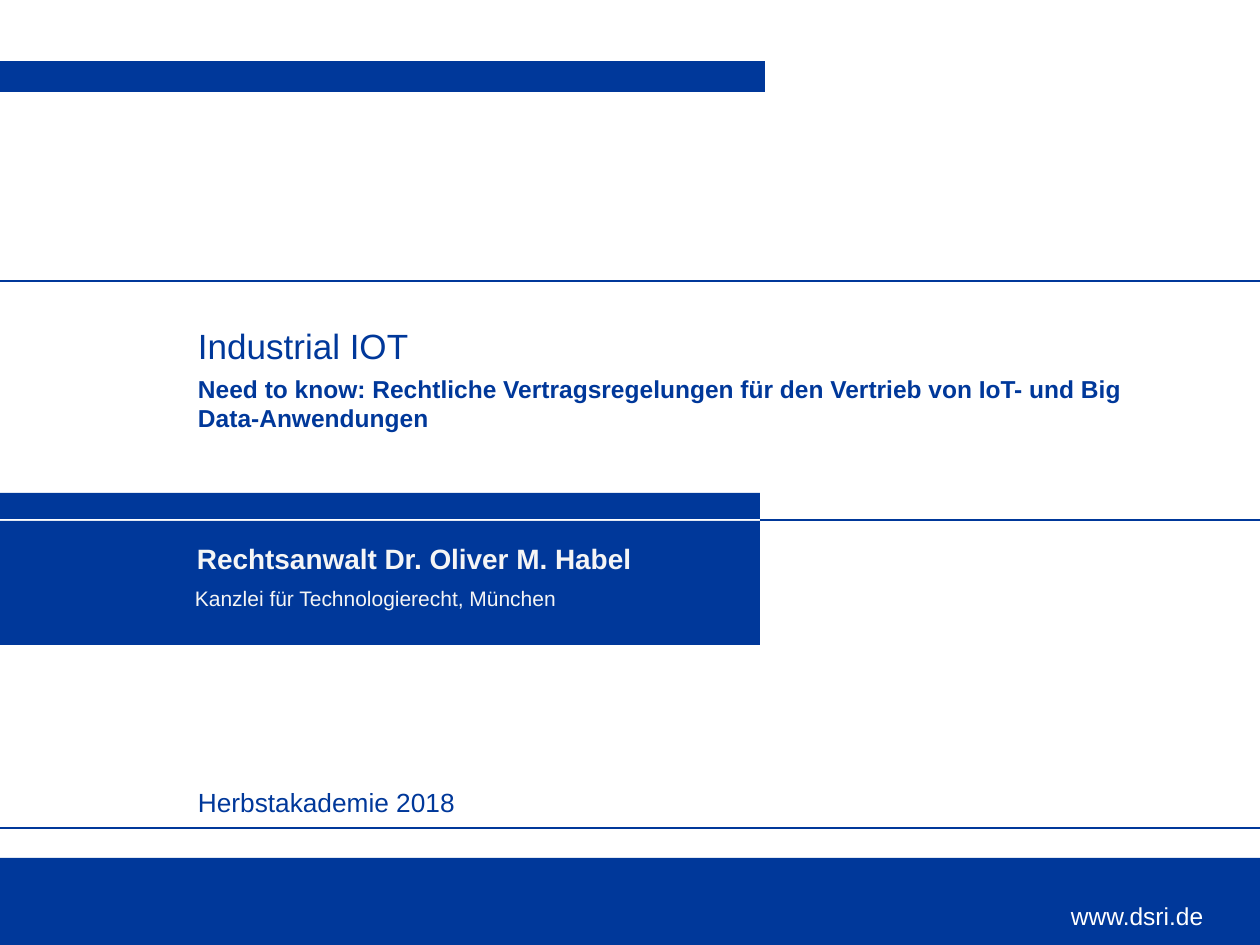
"""Build the title slide of a talk on industrial IoT contracts."""
from lxml.etree import SubElement
from pptx import Presentation
from pptx.dml.color import RGBColor
from pptx.enum.shapes import MSO_CONNECTOR, MSO_SHAPE
from pptx.enum.text import MSO_ANCHOR, PP_ALIGN
from pptx.oxml.ns import qn
from pptx.util import Emu, Pt

PIXEL = 914400 // 126
WIDTH, HEIGHT = 1260, 945
COLORS = {"blue": "00389A", "white": "FFFFFF", "pale": "F5F5F5"}

BARS = [
    (0, 521, 760, 124),
    (0, 493, 760, 26),
    (0, 61, 765, 31),
    (0, 858, WIDTH, 87),
]
RULES = [(760, 520, 1), (0, 828, 0.75), (0, 281, 1)]
TEXTS = [
    {"text": "Herbstakademie 2018", "box": (198, 786, 1000, 32), "color": "blue", "font": {"size": Pt(15)}},
    {"text": "www.dsri.de", "box": (1071, 901, 164, 29), "color": "white", "font": {"size": Pt(14)},
     "fill": "blue", "anchor": MSO_ANCHOR.BOTTOM},
    {"text": "Industrial IOT", "box": (198, 324, 968, 47), "color": "blue", "font": {"size": Pt(20)}},
    {"text": "Need to know: Rechtliche Vertragsregelungen für den Vertrieb von IoT- und Big Data-Anwendungen",
     "box": (198, 374, 968, 39), "color": "blue", "font": {"size": Pt(14), "bold": True}},
    {"text": "Rechtsanwalt Dr. Oliver M. Habel", "box": (197, 542, 532, 34), "color": "pale",
     "font": {"size": Pt(16), "bold": True}, "fill": "blue"},
    {"text": "Kanzlei für Technologierecht, München", "box": (195, 586, 532, 25), "color": "pale",
     "font": {"size": Pt(12)}, "fill": "blue"},
]


def color(name):
    return RGBColor.from_string(COLORS[name])


def scaled(lengths):
    return [Emu(length * PIXEL) for length in lengths]


def add_bar(slide, box, fill="blue"):
    shape = slide.shapes.add_shape(MSO_SHAPE.RECTANGLE, *scaled(box))
    shape.shadow.inherit = False
    shape.fill.solid()
    shape.fill.fore_color.rgb = color(fill)
    shape.line.fill.background()
    return shape


def add_rule(slide, left, top, weight):
    connector = slide.shapes.add_connector(MSO_CONNECTOR.STRAIGHT, *scaled((left, top, WIDTH, top)))
    connector.line.color.rgb = color("blue")
    connector.line.width = Pt(weight)
    SubElement(connector._element.spPr, qn("a:effectLst"))


def add_text(slide, item):
    if "fill" in item:
        shape = add_bar(slide, item["box"], item["fill"])
    else:
        shape = slide.shapes.add_textbox(*scaled(item["box"]))
    frame = shape.text_frame
    frame_format = {"word_wrap": True, "vertical_anchor": item.get("anchor", MSO_ANCHOR.TOP),
                    "margin_left": 0, "margin_top": 0, "margin_right": 0, "margin_bottom": 0}
    for name, value in frame_format.items():
        setattr(frame, name, value)
    paragraph = frame.paragraphs[0]
    paragraph.alignment = PP_ALIGN.LEFT
    run = paragraph.add_run()
    run.text = item["text"]
    for name, value in {"name": "Arial", **item["font"]}.items():
        setattr(run.font, name, value)
    run.font.color.rgb = color(item["color"])


def main():
    presentation = Presentation()
    presentation.slide_width, presentation.slide_height = scaled((WIDTH, HEIGHT))
    slide = presentation.slides.add_slide(presentation.slide_layouts[6])
    for box in BARS:
        add_bar(slide, box)
    for rule in RULES:
        add_rule(slide, *rule)
    for item in TEXTS:
        add_text(slide, item)
    presentation.save("out.pptx")


if __name__ == "__main__":
    main()
